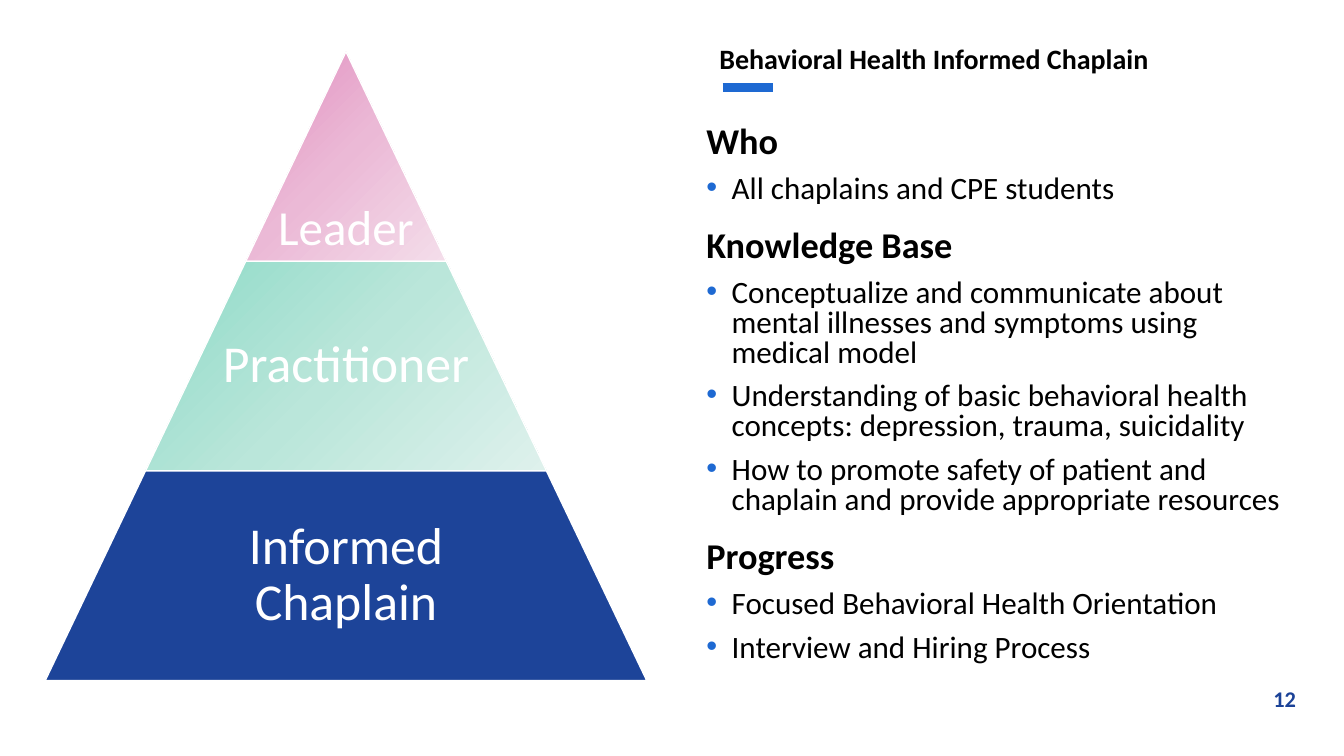
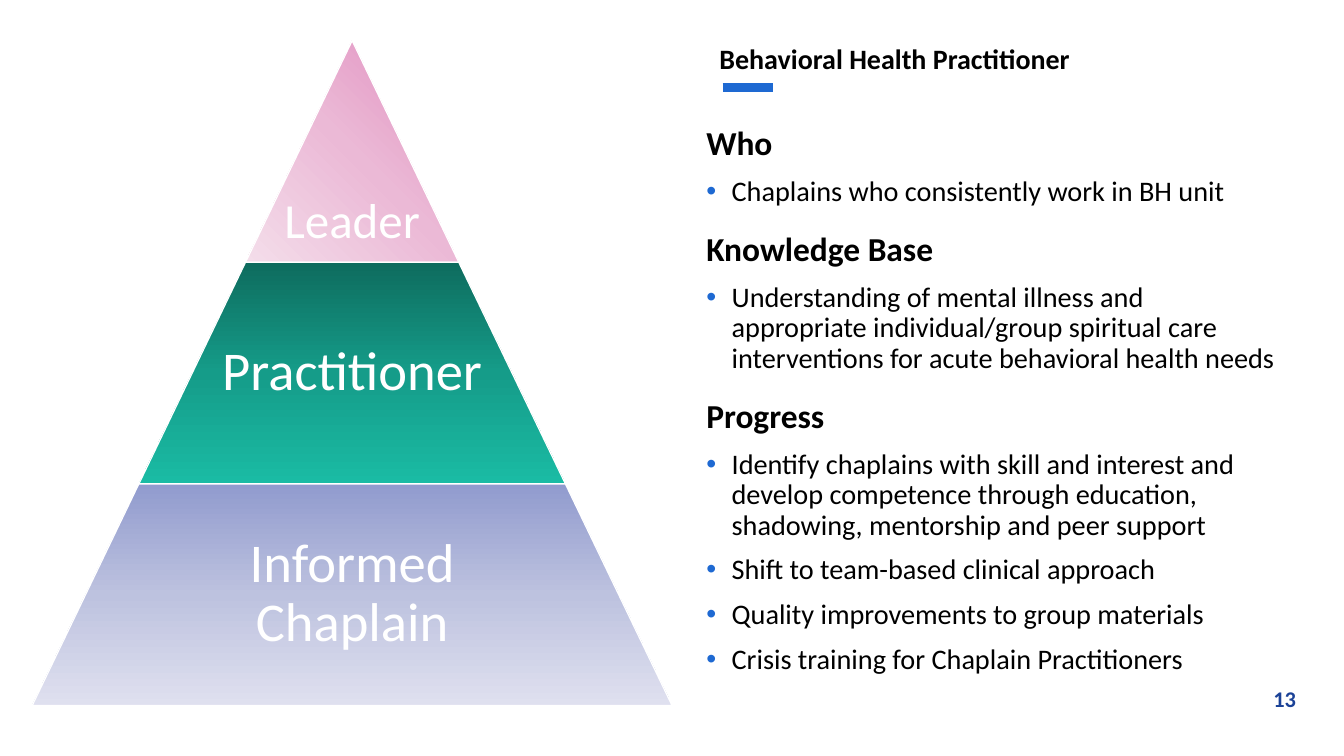
from lxml import etree
from pptx import Presentation
from pptx import util as u
from pptx.dml.color import RGBColor
from pptx.enum import shapes, text
from pptx.oxml import ns

HUES = {
    "ink": "000000", "white": "FFFFFF", "page": "1B4297", "mark": "1E69D2",
    "navy": ["1D4499"],
    "pink": ["E18DBE", "EBB9D6", "F4DDEA"],
    "mint": ["8DDAC7", "BAE6DA", "DEF1EC"],
    "teal": ["0E6C5E", "159C89", "1ABBA4"],
    "haze": ["919BCE", "BDC2DF", "DFE0EF"],
}
PAD = 0.13
SLOPE = 0.175
LEVELS = ["Leader", "Practitioner", "Informed Chaplain"]


def put(item, **vals):
    for name, val in vals.items():
        setattr(item, name, val)


def add(node, tag, **attrs):
    return etree.SubElement(node, ns.qn(tag), attrs)


class Deck:
    font = "Calibri"

    def __init__(self):
        self.prs = Presentation()
        put(self.prs, slide_width=u.Cm(33.87), slide_height=u.Cm(19.05))
        self.slide = None

    def page(self, title, num):
        self.slide = self.prs.slides.add_slide(self.prs.slide_layouts[6])
        frame = self.box(31.06, 17.15, 1.85, 0.94)
        self.para(frame, num, 16, "page", bold=True, align="RIGHT")
        self.rule(18.21, 2.21, 1.27)
        frame = self.box(17.88, 1.02, 14.71, 1.45)
        self.para(frame, title, 20, bold=True, lead=0.9)

    def box(self, *place):
        frame = self.slide.shapes.add_textbox(*map(u.Cm, place)).text_frame
        frame.word_wrap = True
        return frame

    def para(self, frame, words, size, hue="ink", bold=False, align="LEFT", lead=1.0, gap=0, dot=False):
        first = not frame.paragraphs[0].runs
        para = frame.paragraphs[0] if first else frame.add_paragraph()
        put(para, alignment=getattr(text.PP_ALIGN, align), line_spacing=lead,
            space_before=u.Pt(0 if first else gap))
        if dot:
            props = para._p.get_or_add_pPr()
            props.set("marL", str(u.Cm(0.64)))
            props.set("indent", str(-u.Cm(0.64)))
            add(add(props, "a:buClr"), "a:srgbClr", val=HUES["mark"])
            add(props, "a:buFont", typeface="Arial")
            add(props, "a:buChar", char="•")
        run = para.add_run()
        run.text = words
        put(run.font, name=self.font, size=u.Pt(size), bold=bold)
        run.font.color.rgb = RGBColor.from_string(HUES[hue])

    def rule(self, left, top, width):
        line = self.slide.shapes.add_connector(
            shapes.MSO_CONNECTOR.STRAIGHT, *map(u.Cm, (left, top, left + width, top)))
        line.line.color.rgb = RGBColor.from_string(HUES["mark"])
        line.line.width = u.Pt(6)
        add(line._element.spPr, "a:effectLst")

    def paint(self, shape, hues, angle):
        fill = shape.fill
        if len(hues) == 1:
            fill.solid()
            fill.fore_color.rgb = RGBColor.from_string(hues[0])
            return
        fill.gradient()
        fill.gradient_angle = 360 - angle
        stops = shape._element.spPr.find(".//" + ns.qn("a:gsLst"))
        for stop in list(stops):
            stops.remove(stop)
        for i, hue in enumerate(hues):
            stop = add(stops, "a:gs", pos=str(i * 100000 // (len(hues) - 1)))
            add(stop, "a:srgbClr", val=hue)

    def tier(self, mid, top, high, wide, base, words, size, hues, angle, foot):
        tip = wide > 0
        spots = [(mid - base / 2, top + high), (mid - wide / 2, top)]
        spots += [(mid + wide / 2, top)] * tip + [(mid + base / 2, top + high)]
        spots = [(u.Cm(x), u.Cm(y)) for x, y in spots]
        path = self.slide.shapes.build_freeform(*spots[0])
        path.add_line_segments(spots[1:], close=True)
        shape = path.convert_to_shape()
        shape.shadow.inherit = False
        self.paint(shape, hues, angle)
        shape.line.color.rgb = RGBColor.from_string(HUES["white"])
        shape.line.width = u.Pt(1)
        frame = shape.text_frame
        side = u.Cm(PAD + base * SLOPE * tip)
        anchor = text.MSO_ANCHOR.MIDDLE if tip else text.MSO_ANCHOR.BOTTOM
        put(frame, word_wrap=True, vertical_anchor=anchor,
            margin_left=side, margin_right=side, margin_top=u.Cm(PAD),
            margin_bottom=u.Cm(PAD if tip else foot))
        self.para(frame, words, size, "white", align="CENTER", lead=0.9)

    def peak(self, left, top, width, height, size, foot, looks):
        step, high = width / len(LEVELS), height / len(LEVELS)
        for i, (words, (hue, angle)) in enumerate(zip(LEVELS, looks)):
            self.tier(left + width / 2, top + i * high, high, i * step, (i + 1) * step,
                      words, size if i else 35, HUES[hue], angle, foot)

    def notes(self, height, head, size, lead, parts):
        frame = self.box(17.55, 3.07, 15.04, height)
        for name, items in parts.items():
            self.para(frame, name, head, bold=True, lead=lead, gap=18)
            for item in items:
                self.para(frame, item, size, lead=lead, gap=10, dot=True)


def main():
    deck = Deck()

    deck.page("Behavioral Health Informed Chaplain", "12")
    deck.peak(1.14, 1.3, 15.16, 15.85, 37, 0.13,
              [("pink", 45), ("mint", 45), ("navy", 0)])
    deck.notes(14.05, 25.9, 22.2, 0.8, {
        "Who": ["All chaplains and CPE students"],
        "Knowledge Base": [
            "Conceptualize and communicate about mental illnesses and symptoms using medical model",
            "Understanding of basic behavioral health concepts: depression, trauma, suicidality",
            "How to promote safety of patient and chaplain and provide appropriate resources",
        ],
        "Progress": ["Focused Behavioral Health Orientation", "Interview and Hiring Process"],
    })

    deck.page("Behavioral Health Practitioner", "13")
    deck.peak(0.81, 1.02, 16.13, 16.76, 39, 0.33,
              [("pink", 135), ("teal", 90), ("haze", 90)])
    deck.notes(14.99, 23.9, 20.2, 0.9, {
        "Who": ["Chaplains who consistently work in BH unit"],
        "Knowledge Base": [
            "Understanding of mental illness and appropriate individual/group spiritual care "
            "interventions for acute behavioral health needs",
        ],
        "Progress": [
            "Identify chaplains with skill and interest and develop competence through education, "
            "shadowing, mentorship and peer support",
            "Shift to team-based clinical approach",
            "Quality improvements to group materials",
            "Crisis training for Chaplain Practitioners",
        ],
    })

    deck.prs.save("out.pptx")


if __name__ == "__main__":
    main()
